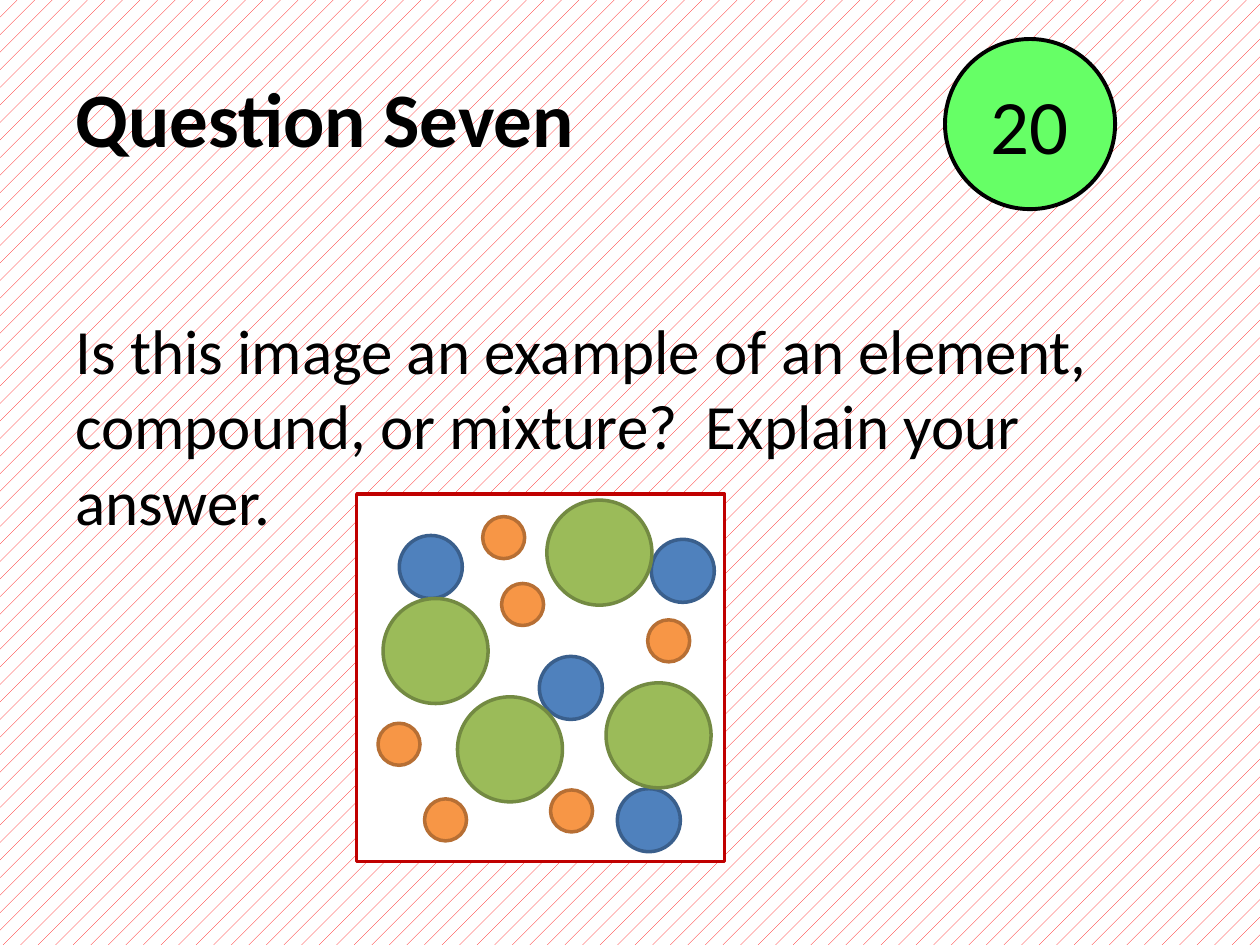
"""Build a quiz slide asking whether a particle diagram shows an element, compound or mixture."""
from dataclasses import dataclass

from pptx import Presentation
from pptx.dml.color import RGBColor
from pptx.enum.dml import MSO_PATTERN
from pptx.enum.shapes import MSO_SHAPE
from pptx.enum.text import MSO_ANCHOR, PP_ALIGN
from pptx.util import Pt

FONT = "Calibri"


@dataclass(frozen=True)
class Element:
    diameter: float
    fill: str
    outline: str
    positions: tuple[tuple[float, float], ...]


ELEMENTS = (
    Element(36, "4F81BD", "3A5F8C",
            ((228.2, 306), (372.2, 308.2), (352.8, 450.7), (308.2, 375.1))),
    Element(60, "9BBB59", "738A42",
            ((218.9, 342), (346.3, 390.2), (312.5, 285.8), (261.4, 398.2))),
    Element(24, "F79646", "B76F34",
            ((286.6, 333.4), (216, 413.3), (242.6, 456.5),
             (314.6, 451.4), (370.1, 354.2), (275.8, 295.2))),
)


def paint(color_format, value: str) -> None:
    color_format.rgb = RGBColor.from_string(value)


def add_figure(slide, kind: MSO_SHAPE, left: float, top: float, size: float,
               fill: str, outline: str, weight: float = 2):
    figure = slide.shapes.add_shape(kind, Pt(left), Pt(top), Pt(size), Pt(size))
    figure.shadow.inherit = False
    figure.fill.solid()
    paint(figure.fill.fore_color, fill)
    paint(figure.line.color, outline)
    figure.line.width = Pt(weight)
    return figure


def write(frame, text: str, size: float, align: PP_ALIGN = PP_ALIGN.LEFT,
          bold: bool = False) -> None:
    frame.text = text
    paragraph = frame.paragraphs[0]
    paragraph.alignment = align
    paragraph.font.name = FONT
    paragraph.font.size = Pt(size)
    paragraph.font.bold = bold
    paint(paragraph.font.color, "000000")


def main() -> None:
    presentation = Presentation()
    presentation.slide_width, presentation.slide_height = Pt(720), Pt(540)
    slide = presentation.slides.add_slide(presentation.slide_layouts[5])

    backdrop = slide.background.fill
    backdrop.patterned()
    backdrop.pattern = MSO_PATTERN.PERCENT_5
    paint(backdrop.fore_color, "FF0000")
    paint(backdrop.back_color, "FFFFFF")

    heading = slide.shapes.title
    heading.left, heading.top = Pt(36), Pt(21.6)
    heading.width, heading.height = Pt(648), Pt(90)
    heading.text_frame.vertical_anchor = MSO_ANCHOR.MIDDLE
    write(heading.text_frame, "Question Seven", 44, bold=True)

    question = slide.shapes.add_textbox(Pt(36), Pt(174.2), Pt(648), Pt(308.2))
    question.text_frame.word_wrap = True
    write(question.text_frame,
          "Is this image an example of an element, compound, or mixture?  Explain your answer.",
          36)

    points = add_figure(slide, MSO_SHAPE.OVAL, 540, 22.3, 97.2, "66FF66", "000000", 2.25)
    points.text_frame.word_wrap = False
    points.text_frame.vertical_anchor = MSO_ANCHOR.MIDDLE
    write(points.text_frame, "20", 44, PP_ALIGN.CENTER)

    add_figure(slide, MSO_SHAPE.RECTANGLE, 203.8, 282.2, 210.2, "FFFFFF", "C00000")
    for element in ELEMENTS:
        for left, top in element.positions:
            add_figure(slide, MSO_SHAPE.OVAL, left, top, element.diameter,
                       element.fill, element.outline)

    presentation.save("out.pptx")


if __name__ == "__main__":
    main()
